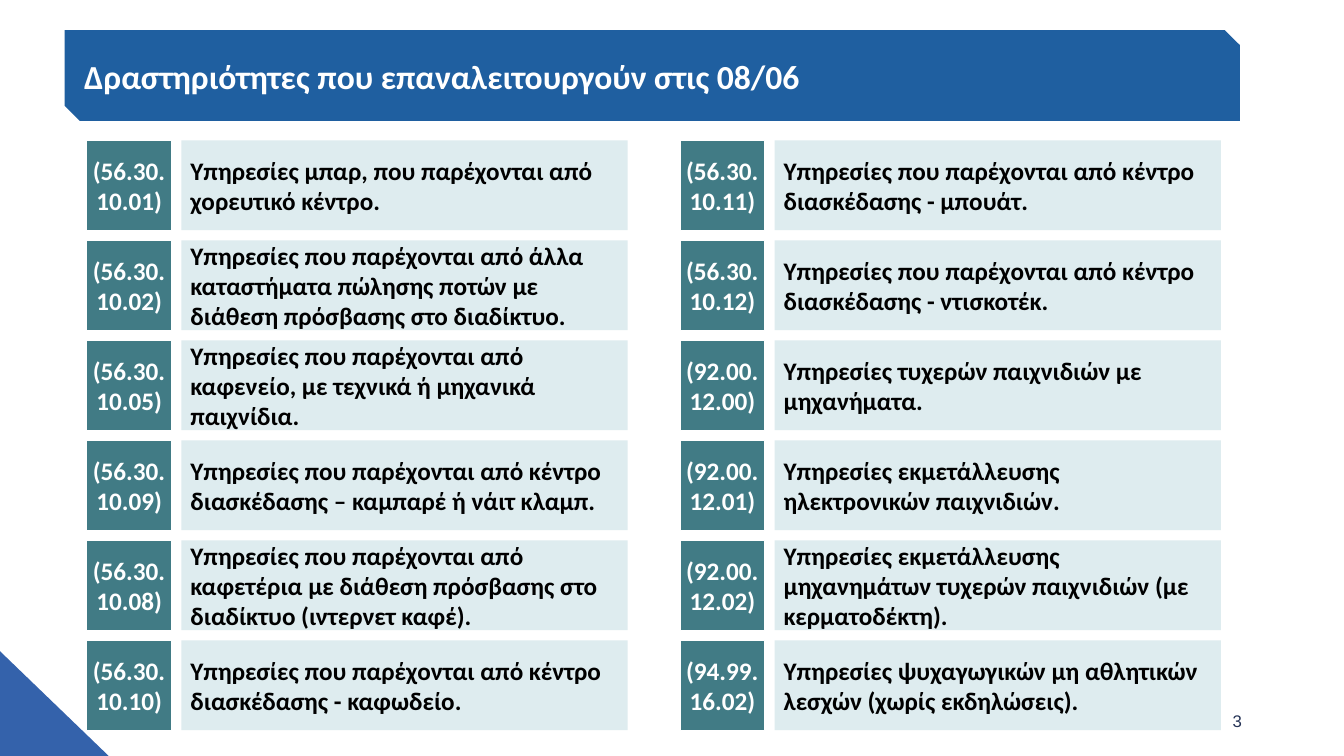
from pptx import Presentation
from pptx.dml.color import RGBColor
from pptx.enum.shapes import MSO_SHAPE
from pptx.enum.text import MSO_ANCHOR, PP_ALIGN
from pptx.util import Cm, Pt

RECTANGLE = MSO_SHAPE.RECTANGLE
RIGHT_TRIANGLE = MSO_SHAPE.RIGHT_TRIANGLE
SNIPPED_BANNER = MSO_SHAPE.SNIP_2_DIAG_RECTANGLE
MIDDLE = MSO_ANCHOR.MIDDLE
LEFT, CENTER, RIGHT = PP_ALIGN.LEFT, PP_ALIGN.CENTER, PP_ALIGN.RIGHT

FIRST_TOP, ROW_PITCH, ROW_HEIGHT = 3.54, 2.52, 2.26
CODE_WIDTH, TEXT_OFFSET, TEXT_WIDTH = 2.13, 2.38, 11.25

# Left edge of each column, then its activity codes and descriptions
COLUMNS = [
    (2.19, [
        ("(56.30. 10.01)", "Υπηρεσίες μπαρ, που παρέχονται από χορευτικό κέντρο."),
        ("(56.30. 10.02)", "Υπηρεσίες που παρέχονται από άλλα καταστήματα πώλησης "
                           "ποτών με διάθεση πρόσβασης στο διαδίκτυο."),
        ("(56.30. 10.05)", "Υπηρεσίες που παρέχονται από καφενείο, με τεχνικά ή "
                           "μηχανικά παιχνίδια."),
        ("(56.30. 10.09)", "Υπηρεσίες που παρέχονται από κέντρο διασκέδασης – "
                           "καμπαρέ ή νάιτ κλαμπ."),
        ("(56.30. 10.08)", "Υπηρεσίες που παρέχονται από καφετέρια με διάθεση "
                           "πρόσβασης στο διαδίκτυο (ιντερνετ καφέ)."),
        ("(56.30. 10.10)", "Υπηρεσίες που παρέχονται από κέντρο διασκέδασης - "
                           "καφωδείο."),
    ]),
    (17.14, [
        ("(56.30. 10.11)", "Υπηρεσίες που παρέχονται από κέντρο διασκέδασης - μπουάτ."),
        ("(56.30. 10.12)", "Υπηρεσίες που παρέχονται από κέντρο διασκέδασης - ντισκοτέκ."),
        ("(92.00. 12.00)", "Υπηρεσίες τυχερών παιχνιδιών με μηχανήματα."),
        ("(92.00. 12.01)", "Υπηρεσίες εκμετάλλευσης ηλεκτρονικών παιχνιδιών."),
        ("(92.00. 12.02)", "Υπηρεσίες εκμετάλλευσης μηχανημάτων τυχερών παιχνιδιών "
                           "(με κερματοδέκτη)."),
        ("(94.99. 16.02)", "Υπηρεσίες ψυχαγωγικών μη αθλητικών λεσχών (χωρίς "
                           "εκδηλώσεις)."),
    ]),
]


def add_block(kind, left, top, width, height, fill, outline=None):
    shape = slide.shapes.add_shape(kind, Cm(left), Cm(top), Cm(width), Cm(height))
    shape.shadow.inherit = False
    shape.fill.solid()
    shape.fill.fore_color.rgb = RGBColor.from_string(fill)
    if outline:
        shape.line.color.rgb = RGBColor.from_string(outline)
        shape.line.width = Pt(0.75)
    else:
        shape.line.fill.background()
    return shape


def write(shape, text, size, color, align, side, vertical, font="Calibri", bold=True):
    """Set one middle-anchored paragraph, with side and vertical insets in cm."""
    frame = shape.text_frame
    frame.word_wrap = True
    frame.vertical_anchor = MIDDLE
    frame.margin_left = frame.margin_right = Cm(side)
    frame.margin_top = frame.margin_bottom = Cm(vertical)
    frame.text = text
    paragraph = frame.paragraphs[0]
    paragraph.alignment = align
    run_font = paragraph.runs[0].font
    run_font.name, run_font.size, run_font.bold = font, Pt(size), bold
    run_font.color.rgb = RGBColor.from_string(color)


presentation = Presentation()
presentation.slide_width = Cm(33.87)
presentation.slide_height = Cm(19.05)
slide = presentation.slides.add_slide(presentation.slide_layouts[6])

add_block(RIGHT_TRIANGLE, 0, 16.41, 2.74, 2.64, "3462AB")

slide_number = slide.shapes.add_textbox(Cm(23.93), Cm(17.65), Cm(7.62), Cm(1.02))
write(slide_number, "3", 12, "253356", RIGHT, 0.25, 0.13, font="Arial", bold=False)

title = add_block(SNIPPED_BANNER, 1.63, 0.76, 29.62, 2.29, "1F5FA0")
write(title, "Δραστηριότητες που επαναλειτουργούν στις 08/06", 24, "FFFFFF",
      LEFT, 0.3, 0.05)

for column_left, activities in COLUMNS:
    for row, (code, description) in enumerate(activities):
        top = FIRST_TOP + row * ROW_PITCH
        code_box = add_block(RECTANGLE, column_left, top, CODE_WIDTH, ROW_HEIGHT,
                             "417B85", outline="FFFFFF")
        write(code_box, code, 18, "FFFFFF", CENTER, 0.1, 0.23)
        description_box = add_block(RECTANGLE, column_left + TEXT_OFFSET, top,
                                    TEXT_WIDTH, ROW_HEIGHT, "DEECEF")
        write(description_box, description, 18, "000000", LEFT, 0.23, 0.1)

presentation.save("out.pptx")
